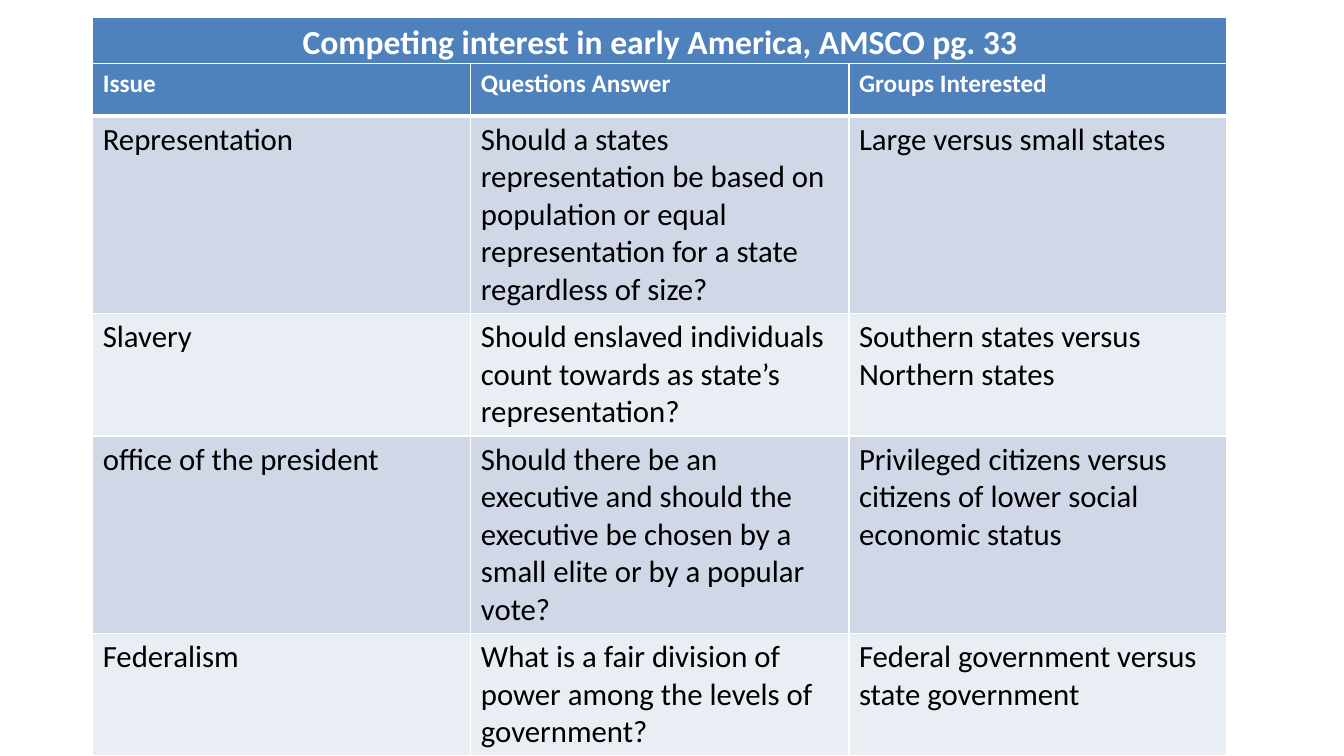
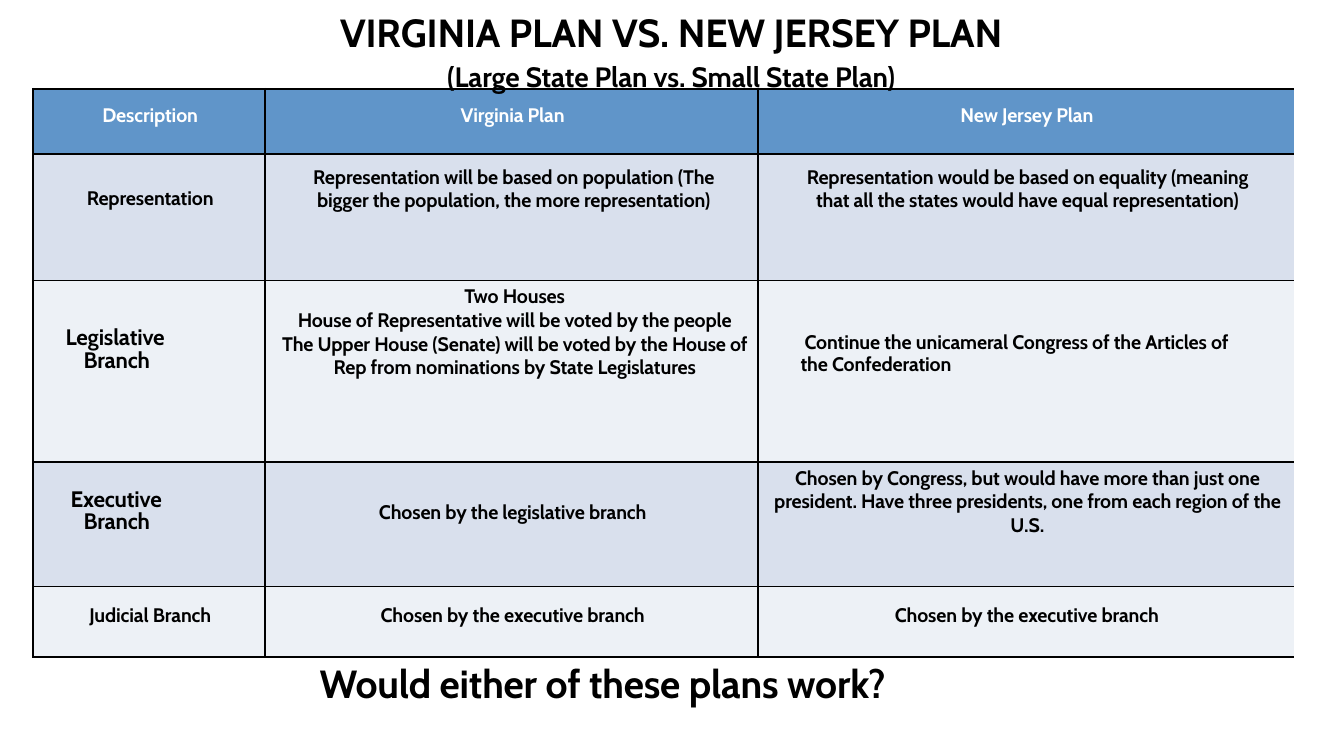
from dataclasses import dataclass
from typing import Any

from lxml.etree import SubElement, QName
from pptx import Presentation
from pptx.dml.color import RGBColor as RGB
from pptx.enum.text import PP_ALIGN as AL
from pptx.oxml.ns import qn
from pptx.util import Inches as In, Pt

SLIDE_W, SLIDE_H = 13.33, 7.5


@dataclass(frozen=True)
class Theme:
    """Colours, fonts and type sizes of the deck."""
    black: str = "000000"
    white: str = "FFFFFF"
    issue_head: str = "4F81BD"
    issue_bands: tuple = ("D0D8E8", "E9EDF4")
    plan_head: str = "6095C9"
    plan_bands: tuple = ("D9E0ED", "EDF1F6")
    issue_font: str = "Calibri"
    plan_font: str = "Cabin"
    title: int = 28
    banner: int = 24
    body: int = 22
    subtitle: int = 20
    label: int = 18
    branch: int = 16
    plan: int = 14


T = Theme()


@dataclass(frozen=True)
class Style:
    """Look of the paragraphs in one text frame."""
    font: str
    size: int
    color: str = T.black
    bold: bool = True
    align: Any = AL.LEFT
    leading: Any = 1.0
    hang: tuple = (0, 0)
    track: int = 0


@dataclass(frozen=True)
class Entry:
    """Lines of a table cell, with style and insets (left, top, right, bottom)."""
    lines: tuple
    style: Style
    inset: tuple = (0.1, 0.05, 0.1, 0.05)


def write_paragraph(p, text, style):
    """Write one line of text in the given style."""
    p.alignment, p.line_spacing = style.align, style.leading
    pPr = p._p.get_or_add_pPr()
    for name, value in zip(("marL", "indent"), style.hang):
        pPr.set(name, str(In(value)))
    r = p.add_run()
    r.text = text
    if style.track:
        r._r.get_or_add_rPr().set("spc", str(style.track))
    f = p.font
    f.name, f.size, f.bold = style.font, Pt(style.size), style.bold
    f.color.rgb = RGB.from_string(style.color)


def write_lines(tf, lines):
    """Fill a text frame with (text, style) pairs."""
    for i, (text, style) in enumerate(lines):
        write_paragraph(tf.add_paragraph() if i else tf.paragraphs[0], text, style)


def set_borders(cell, color, widths):
    """Draw cell borders; widths maps L, R, T, B to points, zero for none."""
    tcPr = cell._tc.get_or_add_tcPr()
    for i, side in enumerate("LRTB"):
        ln = SubElement(tcPr, QName(qn(f"a:ln{side}")), w=str(Pt(widths[side])))
        if widths[side]:
            fill = SubElement(ln, qn("a:solidFill"))
            SubElement(fill, qn("a:srgbClr"), val=color)
        else:
            SubElement(ln, qn("a:noFill"))
        tcPr.insert(i, ln)


def add_grid(s, box, cols, rows, entries, fills, line, borders):
    """Place a table in box, sharing its size out by column and row weights."""
    x, y, w, h = box
    tb = s.shapes.add_table(len(rows), len(cols), In(x), In(y), In(w), In(h)).table
    tb.first_row = tb.horz_banding = False
    for col, share in zip(tb.columns, cols):
        col.width = In(w * share / sum(cols))
    for row, share in zip(tb.rows, rows):
        row.height = In(h * share / sum(rows))
    for i, line_entries in enumerate(entries):
        for j, entry in enumerate(line_entries):
            cell = tb.cell(i, j)
            (cell.margin_left, cell.margin_top,
             cell.margin_right, cell.margin_bottom) = map(In, entry.inset)
            write_lines(cell.text_frame, [(t, entry.style) for t in entry.lines])
            cell.fill.solid()
            cell.fill.fore_color.rgb = RGB.from_string(fills[i])
            set_borders(cell, line, borders(i, j))


def add_text(s, box, lines):
    """Place a text box with (text, style) pairs."""
    tf = s.shapes.add_textbox(*map(In, box)).text_frame
    tf.word_wrap = True
    tf.margin_left = tf.margin_right = tf.margin_bottom = 0
    tf.margin_top = In(0.02)
    write_lines(tf, lines)


def banded(head, bands, count):
    """Return a header fill followed by alternating row fills."""
    return [head] + [bands[i % 2] for i in range(count)]


def issue_slide(prs):
    """Build the slide on competing interests."""
    s = prs.slides.add_slide(prs.slide_layouts[6])
    banner = Style(T.issue_font, T.banner, T.white, align=AL.CENTER)
    head = Style(T.issue_font, T.label, T.white)
    body = Style(T.issue_font, T.body, bold=False)
    x, y, w, banner_h = 0.92, 0.17, 11.25, 0.46
    issues = [
        ("Issue", "Questions Answer", "Groups Interested"),
        ("Representation",
         "Should a states representation be based on population or equal "
         "representation for a state regardless of size?",
         "Large versus small states"),
        ("Slavery",
         "Should enslaved individuals count towards as state’s representation?",
         "Southern states versus Northern states"),
        ("office of the president",
         "Should there be an executive and should the executive be chosen by a "
         "small elite or by a popular vote?",
         "Privileged citizens versus citizens of lower social economic status"),
        ("Federalism",
         "What is a fair division of power among the levels of government?",
         "Federal government versus state government"),
    ]
    entries = [[Entry((t,), body if i else head) for t in row]
               for i, row in enumerate(issues)]

    def rules(i, j):
        """Return thin rules, heavy between header and body."""
        return dict(L=1, R=1, T=3 if i == 1 else 1, B=1 if i else 3)

    add_grid(s, (x, y, w, banner_h), [1], [1],
             [[Entry(("Competing interest in early America, AMSCO pg. 33",), banner)]],
             [T.issue_head], T.white, lambda i, j: dict.fromkeys("LRTB", 1))
    add_grid(s, (x, y + banner_h, w, 6.86), [1] * 3, [0.52, 1.96, 1.21, 1.96, 1.21],
             entries, banded(T.issue_head, T.issue_bands, 4), T.white, rules)


def plan_style(size=T.plan, **options):
    """Return the bold plan style with its slightly tight tracking."""
    return Style(T.plan_font, size, track=-10, **options)


def centred(*lines, top, left=0.02, right=0, color=T.black, leading=1.0):
    """Return a centred plan entry set below the given top inset."""
    style = plan_style(align=AL.CENTER, color=color, leading=leading)
    return Entry(lines, style, (left, top, right, 0))


def hanging(text, top, hang, right, size=T.branch):
    """Return a left-aligned plan entry with tight lines and its own indent."""
    style = plan_style(size, leading=Pt(16), hang=hang)
    return Entry((text,), style, (0, top, right, 0))


def plan_slide(prs):
    """Build the slide comparing the two plans."""
    s = prs.slides.add_slide(prs.slide_layouts[6])
    entries = [
        [centred(t, top=0.15, color=T.white)
         for t in ("Description", "Virginia Plan", "New Jersey Plan")],
        [centred("Representation", top=0.32),
         centred("Representation will be based on population (The bigger the "
                 "population, the more representation)",
                 top=0.11, left=0.3, right=0.26, leading=0.98),
         centred("Representation would be based on equality (meaning that all "
                 "the states would have equal representation)",
                 top=0.11, left=0.35, right=0.32, leading=0.98)],
        [hanging("Legislative Branch", 0.48, (0.5, -0.18), 0.5),
         centred("Two Houses",
                 "House of Representative will be voted by the people",
                 "The Upper House (Senate) will be voted by the House of Rep from "
                 "nominations by State Legislatures",
                 top=0.04, left=0.06, leading=Pt(17)),
         hanging("Continue the unicameral Congress of the Articles of the "
                 "Confederation", 0.51, (0.42, 0.04), 0.4, T.plan)],
        [hanging("Executive Branch", 0.28, (0.5, -0.13), 0.5),
         centred("Chosen by the legislative branch", top=0.38),
         centred("Chosen by Congress, but would have more than just one president. "
                 "Have three presidents, one from each region of the U.S.",
                 top=0.04, left=0.12, right=0.09, leading=0.99)],
        [centred(t, top=0.17)
         for t in ("Judicial Branch", *["Chosen by the executive branch"] * 2)],
    ]

    def rules(i, j):
        """Return even rules, leaving the table open on the right."""
        return dict(L=1.5, R=0 if j == 2 else 1.5, T=1.5, B=1.5)

    add_grid(s, (0.33, 0.88, 12.5, 5.64), [2.3, 4.89, 5.31],
             [0.65, 1.25, 1.8, 1.23, 0.7], entries,
             banded(T.plan_head, T.plan_bands, 4), T.black, rules)
    add_text(s, (3.17, 6.52, 7.2, 0.49),
             [("Would either of these plans work?", plan_style(T.title))])
    add_text(s, (2.27, 0, 8.77, 0.89), [
        ("VIRGINIA PLAN VS. NEW JERSEY PLAN",
         plan_style(T.title, align=AL.CENTER, leading=Pt(38.2))),
        ("(Large State Plan vs. Small State Plan)",
         plan_style(T.subtitle, align=AL.CENTER, leading=Pt(26.8)))])


def main():
    """Build and save the deck."""
    prs = Presentation()
    prs.slide_width, prs.slide_height = In(SLIDE_W), In(SLIDE_H)
    issue_slide(prs)
    plan_slide(prs)
    prs.save("out.pptx")


if __name__ == "__main__":
    main()
